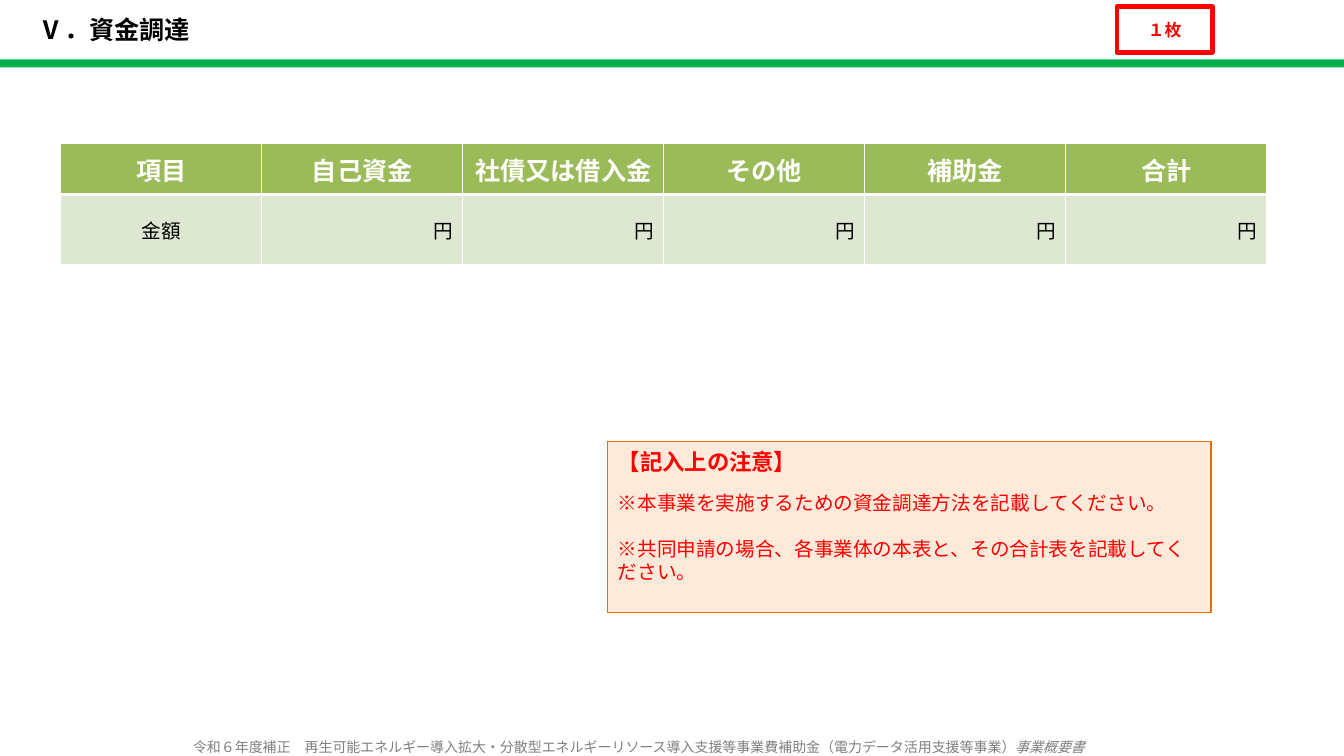
from lxml import etree
from pptx import Presentation
from pptx import util as u
from pptx.dml.color import RGBColor
from pptx.enum import shapes, text
from pptx.oxml.ns import qn

FONT = "Noto Sans CJK JP"
LEFT, CENTER, RIGHT = text.PP_ALIGN.LEFT, text.PP_ALIGN.CENTER, text.PP_ALIGN.RIGHT
MIDDLE, TOP = text.MSO_ANCHOR.MIDDLE, text.MSO_ANCHOR.TOP

TITLE = "Ⅴ．資金調達"
SHEET_COUNT = "１枚"
FUNDING = [
    ["項目", "自己資金", "社債又は借入金", "その他", "補助金", "合計"],
    ["金額"] + ["円"] * 5,
]
# text, size, bold, space before, line height (points)
NOTES = [
    ("【記入上の注意】", 16, True, 0, 18.7),
    ("※本事業を実施するための資金調達方法を記載してください。", 14, False, 11.6, 16.5),
    ("※共同申請の場合、各事業体の本表と、その合計表を記載してください。", 14, False, 16.5, 16.5),
]
PROGRAM = "令和６年度補正　再生可能エネルギー導入拡大・分散型エネルギーリソース導入支援等事業費補助金（電力データ活用支援等事業）"
DOCUMENT = "事業概要書"

# left, top, width, height in cm
FOOTER_BOX = (0, 18.59, 32.2, 0.46)
RULE_BOX = (-0.02, 1.5, 33.89, 0.2)
COUNT_BOX = (28.15, 0.17, 2.4, 1.15)
NOTES_BOX = (15.32, 11.13, 15.2, 4.31)
TITLE_BOX = (0.73, 0.23, 23, 1.04)
TABLE_BOX = (1.53, 3.62, 30.4, 3.05)
ROW_HEIGHTS = (1.28, 1.77)


def color(value):
    return RGBColor.from_string(value)


def box(area):
    return [u.Cm(v) for v in area]


def add_run(p, content, size, hue, bold=False, italic=False):
    r = p.add_run()
    r.text = content
    f = r.font
    f.size, f.bold, f.italic, f.name = u.Pt(size), bold, italic, FONT
    f.color.rgb = color(hue)
    etree.SubElement(r._r.get_or_add_rPr(), qn("a:ea"), typeface=FONT)


def first_paragraph(tf, anchor=MIDDLE, align=LEFT):
    tf.word_wrap = True
    tf.vertical_anchor = anchor
    p = tf.paragraphs[0]
    p.alignment = align
    return p


def add_rect(s, area, fill, line=None, width=0):
    sp = s.shapes.add_shape(shapes.MSO_SHAPE.RECTANGLE, *box(area))
    sp.shadow.inherit = False
    sp.fill.solid()
    sp.fill.fore_color.rgb = color(fill)
    if line:
        sp.line.color.rgb = color(line)
        sp.line.width = u.Pt(width)
    else:
        sp.line.fill.background()
    return sp


def set_borders(cell, bottom, top):
    tcPr = cell._tc.get_or_add_tcPr()
    sides = (("a:lnL", 1), ("a:lnR", 1), ("a:lnT", top), ("a:lnB", bottom))
    for i, (tag, width) in enumerate(sides):
        ln = etree.Element(qn(tag), w=str(u.Pt(width)))
        fill = etree.SubElement(ln, qn("a:solidFill"))
        etree.SubElement(fill, qn("a:srgbClr"), val="FFFFFF")
        tcPr.insert(i, ln)


def add_funding_table(s):
    table = s.shapes.add_table(len(FUNDING), len(FUNDING[0]), *box(TABLE_BOX)).table
    for col in table.columns:
        col.width = u.Cm(TABLE_BOX[2] / len(FUNDING[0]))
    for i, values in enumerate(FUNDING):
        header = i == 0
        table.rows[i].height = u.Cm(ROW_HEIGHTS[i])
        for j, value in enumerate(values):
            cell = table.cell(i, j)
            cell.fill.solid()
            cell.fill.fore_color.rgb = color("9BBB59" if header else "DEE7D1")
            set_borders(cell, bottom=3 if header else 1, top=1 if header else 3)
            cell.vertical_anchor = MIDDLE
            p = cell.text_frame.paragraphs[0]
            p.alignment = CENTER if header or j == 0 else RIGHT
            add_run(p, value, 18 if header else 14, "FFFFFF" if header else "000000", header)


def add_notes(s):
    tf = add_rect(s, NOTES_BOX, "FDEADA", "E46C0A", 0.75).text_frame
    tf.margin_top = u.Cm(0.18)
    p = first_paragraph(tf, TOP)
    for i, (content, size, bold, before, height) in enumerate(NOTES):
        if i:
            p = tf.add_paragraph()
            p.alignment = LEFT
        p.space_before, p.line_spacing = u.Pt(before), u.Pt(height)
        add_run(p, content, size, "FF0000", bold)


def main():
    prs = Presentation()
    prs.slide_width, prs.slide_height = u.Cm(33.87), u.Cm(19.05)
    s = prs.slides.add_slide(prs.slide_layouts[6])

    tf = s.shapes.add_textbox(*box(FOOTER_BOX)).text_frame
    tf.margin_top = tf.margin_bottom = 0
    p = first_paragraph(tf, align=CENTER)
    add_run(p, PROGRAM, 10, "808080")
    add_run(p, DOCUMENT, 10, "808080", italic=True)

    add_rect(s, RULE_BOX, "00B050")
    count = add_rect(s, COUNT_BOX, "FFFFFF", "FF0000", 3.5)
    add_run(first_paragraph(count.text_frame, align=CENTER), SHEET_COUNT, 12, "FF0000", True)
    add_notes(s)

    title = s.shapes.add_textbox(*box(TITLE_BOX))
    add_run(first_paragraph(title.text_frame), TITLE, 18, "000000", True)
    add_funding_table(s)
    prs.save("out.pptx")


if __name__ == "__main__":
    main()
